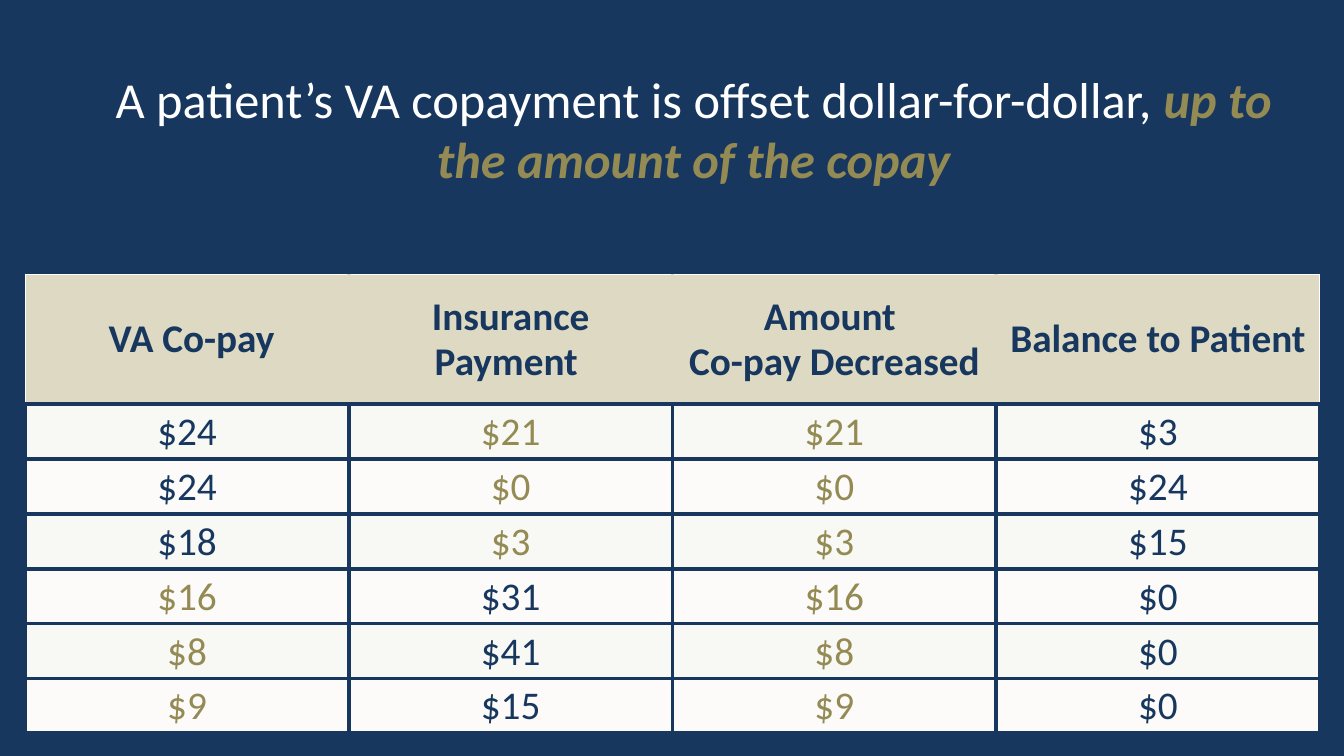
from lxml import etree
from pptx import Presentation
from pptx.dml.color import RGBColor
from pptx.enum.text import MSO_ANCHOR, PP_ALIGN
from pptx.oxml.ns import qn
from pptx.util import Inches, Pt

CENTER = PP_ALIGN.CENTER
TOP = MSO_ANCHOR.TOP
MIDDLE = MSO_ANCHOR.MIDDLE

COLORS = {
    "navy": "17375E",
    "gold": "948A54",
    "white": "FFFFFF",
    "header": "DDD9C3",
    "odd_row": "F8F8F4",
    "even_row": "FCFBF9",
}
TITLE = [
    ("A patient’s VA copayment is offset dollar-for-dollar, ", {"size": Pt(36)}, "white"),
    ("up to the amount of the copay",
     {"size": Pt(36), "bold": True, "italic": True}, "gold"),
]
HEADERS = [
    [" VA Co-pay"],
    ["Insurance Payment "],
    ["Amount ", "Co-pay Decreased"],
    ["Balance to Patient"],
]
COPAYS_AND_PAYMENTS = [(24, 21), (24, 0), (18, 3), (16, 31), (8, 41), (9, 15)]
COLUMN_WIDTH, HEADER_HEIGHT, ROW_HEIGHT = 3.21, 1.29, 0.52


class SlideBuilder:
    def __init__(self, page, font_name):
        self.page = page
        self.font_name = font_name

    def background(self, color):
        self.fill(self.page.background, color)

    def fill(self, target, color):
        target.fill.solid()
        target.fill.fore_color.rgb = RGBColor.from_string(COLORS[color])

    def span(self, para, text, font_format, color):
        span = para.add_run()
        span.text = text
        for name, value in {"name": self.font_name, **font_format}.items():
            setattr(span.font, name, value)
        span.font.color.rgb = RGBColor.from_string(COLORS[color])

    def title(self, left, top, width, height, spans):
        box = self.page.shapes.add_textbox(
            Inches(left), Inches(top), Inches(width), Inches(height))
        frame = box.text_frame
        frame.word_wrap = True
        frame.vertical_anchor = MIDDLE
        para = frame.paragraphs[0]
        para.alignment = CENTER
        for text, font_format, color in spans:
            self.span(para, text, font_format, color)

    def table(self, left, top, column_count, row_heights):
        table = self.page.shapes.add_table(
            len(row_heights), column_count, Inches(left), Inches(top),
            Inches(COLUMN_WIDTH * column_count), Inches(sum(row_heights))).table
        for column in table.columns:
            column.width = Inches(COLUMN_WIDTH)
        for row, height in zip(table.rows, row_heights):
            row.height = Inches(height)
        return table

    def cell(self, cell, lines, color, fill, borders, bold=False, anchor=TOP):
        """Fill one cell; borders maps L, R, T, B to (color, points)."""
        cell.vertical_anchor = anchor
        frame = cell.text_frame
        for index, line in enumerate(lines):
            para = frame.add_paragraph() if index else frame.paragraphs[0]
            para.alignment = CENTER
            para.line_spacing = 0.95
            self.span(para, line, {"size": Pt(28), "bold": bold}, color)
        properties = cell._tc.get_or_add_tcPr()
        for side in "LRTB":
            border_color, points = borders[side]
            line = etree.SubElement(properties, qn(f"a:ln{side}"), w=str(Pt(points)))
            solid = etree.SubElement(line, qn("a:solidFill"))
            etree.SubElement(solid, qn("a:srgbClr"), val=COLORS[border_color])
        self.fill(cell, fill)


def add_copay_table(builder):
    row_heights = [HEADER_HEIGHT] + [ROW_HEIGHT] * len(COPAYS_AND_PAYMENTS)
    table = builder.table(0.25, 2.72, len(HEADERS), row_heights)

    last = len(HEADERS) - 1
    outer, inner = ("white", 1), ("header", 3)
    for column, lines in enumerate(HEADERS):
        borders = {
            "L": outer if column == 0 else inner,
            "R": outer if column == last else inner,
            "T": outer,
            "B": ("navy", 3),
        }
        builder.cell(table.cell(0, column), lines, "navy", "header", borders,
                     bold=True, anchor=MIDDLE)

    body_borders = dict.fromkeys("LRTB", ("navy", 3))
    for row, (copay, payment) in enumerate(COPAYS_AND_PAYMENTS, start=1):
        decrease = min(copay, payment)
        amounts = [copay, payment, decrease, copay - decrease]
        fill = "odd_row" if row % 2 else "even_row"
        # The amount that limits the offset is gold, as is the offset itself.
        gold_columns = (0 if copay < payment else 1, 2)
        for column, amount in enumerate(amounts):
            color = "gold" if column in gold_columns else "navy"
            builder.cell(table.cell(row, column), [f"${amount}"], color, fill,
                         body_borders)


def main():
    deck = Presentation()
    deck.slide_width = Inches(13.33)
    deck.slide_height = Inches(7.5)
    builder = SlideBuilder(deck.slides.add_slide(deck.slide_layouts[6]), "Calibri")
    builder.background("navy")
    builder.title(0.67, 0.3, 12.42, 1.95, TITLE)
    add_copay_table(builder)
    deck.save("out.pptx")


if __name__ == "__main__":
    main()
